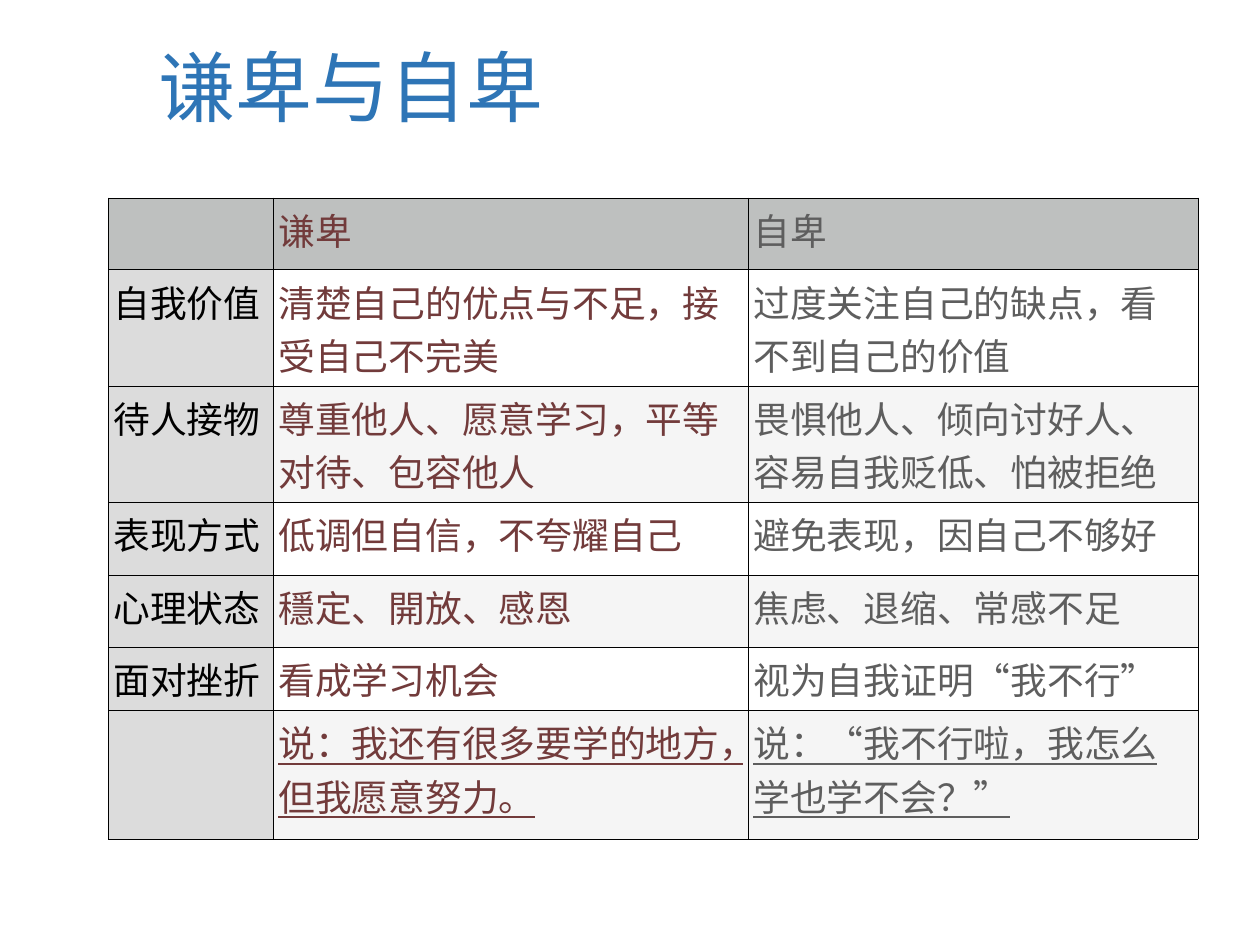
from lxml import etree
from pptx import Presentation
from pptx import util as u
from pptx.dml.color import RGBColor
from pptx.enum import text
from pptx.oxml import ns

BLUE = RGBColor(0x2E, 0x75, 0xB6)
BROWN = RGBColor(0x72, 0x3B, 0x3B)
GRAY = RGBColor(0x5E, 0x5E, 0x5E)
BLACK = RGBColor(0, 0, 0)
WHITE = RGBColor(0xFF, 0xFF, 0xFF)
HEAD = RGBColor(0xBE, 0xC0, 0xBF)
SIDE = RGBColor(0xDC, 0xDC, 0xDC)
BAND = RGBColor(0xF5, 0xF5, 0xF5)

COLS = [1.31, 3.77, 3.57]
HEIGHTS = [0.57, 0.9, 0.9, 0.58, 0.57, 0.49, 1.02]
ROWS = [
    ("", "谦卑", "自卑"),
    ("自我价值", "清楚自己的优点与不足，接受自己不完美", "过度关注自己的缺点，看不到自己的价值"),
    ("待人接物", "尊重他人、愿意学习，平等对待、包容他人", "畏惧他人、倾向讨好人、容易自我贬低、怕被拒绝"),
    ("表现方式", "低调但自信，不夸耀自己", "避免表现，因自己不够好"),
    ("心理状态", "穩定、開放、感恩", "焦虑、退缩、常感不足"),
    ("面对挫折", "看成学习机会", "视为自我证明“我不行”"),
    ("", "说：我还有很多要学的地方，但我愿意努力。", "说：“我不行啦，我怎么学也学不会？”"),
]


def write(frame, words, size=21, color=BLACK, font="Noto Sans CJK SC", line=None, under=None):
    para = frame.paragraphs[0]
    para.alignment = text.PP_ALIGN.LEFT
    para.line_spacing = line
    run = para.add_run()
    run.text = words
    run.font.size = u.Pt(size)
    run.font.bold = False
    run.font.underline = under
    run.font.color.rgb = color
    run.font.name = font
    east = etree.Element(ns.qn("a:ea"), typeface="Noto Sans CJK SC")
    run.font._element.find(ns.qn("a:latin")).addnext(east)


class Deck:
    inset = u.Inches(0.04)
    thin, thick = 0.35, 0.75

    def __init__(self):
        self.prs = Presentation()
        self.prs.slide_width = u.Inches(10)
        self.prs.slide_height = u.Inches(7.5)
        self.slide = self.prs.slides.add_slide(self.prs.slide_layouts[5])

    def title(self, words, x, y, w, h):
        box = self.slide.shapes.title
        box.left, box.top, box.width, box.height = map(u.Inches, (x, y, w, h))
        frame = box.text_frame
        frame.vertical_anchor = text.MSO_ANCHOR.MIDDLE
        frame.word_wrap = True
        write(frame, words, size=44, color=BLUE, font="Arial", line=0.9)

    def border(self, cell, row, col):
        left = self.thick if row and col == 1 else self.thin
        right = self.thick if row and col == 0 else self.thin
        top = self.thick if row == 1 else self.thin
        base = self.thick if row == 0 else self.thin
        props = cell._tc.get_or_add_tcPr()
        for spot, (side, width) in enumerate(zip("LRTB", (left, right, top, base))):
            line = etree.Element(ns.qn(f"a:ln{side}"), w=str(u.Pt(width)))
            fill = etree.SubElement(line, ns.qn("a:solidFill"))
            etree.SubElement(fill, ns.qn("a:srgbClr"), val=str(BLACK))
            props.insert(spot, line)

    def cell(self, cell, words, row, col):
        cell.margin_left = cell.margin_right = self.inset
        cell.margin_top = cell.margin_bottom = self.inset
        cell.fill.solid()
        band = WHITE if row % 2 else BAND
        cell.fill.fore_color.rgb = HEAD if row == 0 else SIDE if col == 0 else band
        self.border(cell, row, col)
        if words:
            write(cell.text_frame, words, color=(BLACK, BROWN, GRAY)[col],
                  font="Arial" if (row, col) == (0, 1) else "Noto Sans CJK SC",
                  under=True if row == len(ROWS) - 1 else None)

    def table(self, rows, cols, heights, x, y):
        size = map(u.Inches, (x, y, sum(cols), sum(heights)))
        grid = self.slide.shapes.add_table(len(rows), len(cols), *size).table
        grid.first_row = grid.horz_banding = False
        for col, width in zip(grid.columns, cols):
            col.width = u.Inches(width)
        for row, height in zip(grid.rows, heights):
            row.height = u.Inches(height)
        for r, row in enumerate(rows):
            for c, words in enumerate(row):
                self.cell(grid.cell(r, c), words, r, c)


def main():
    deck = Deck()
    deck.title("谦卑与自卑", 1.16, 0, 8.62, 1.45)
    deck.table(ROWS, COLS, HEIGHTS, 0.86, 1.57)
    deck.prs.save("out.pptx")


if __name__ == "__main__":
    main()
